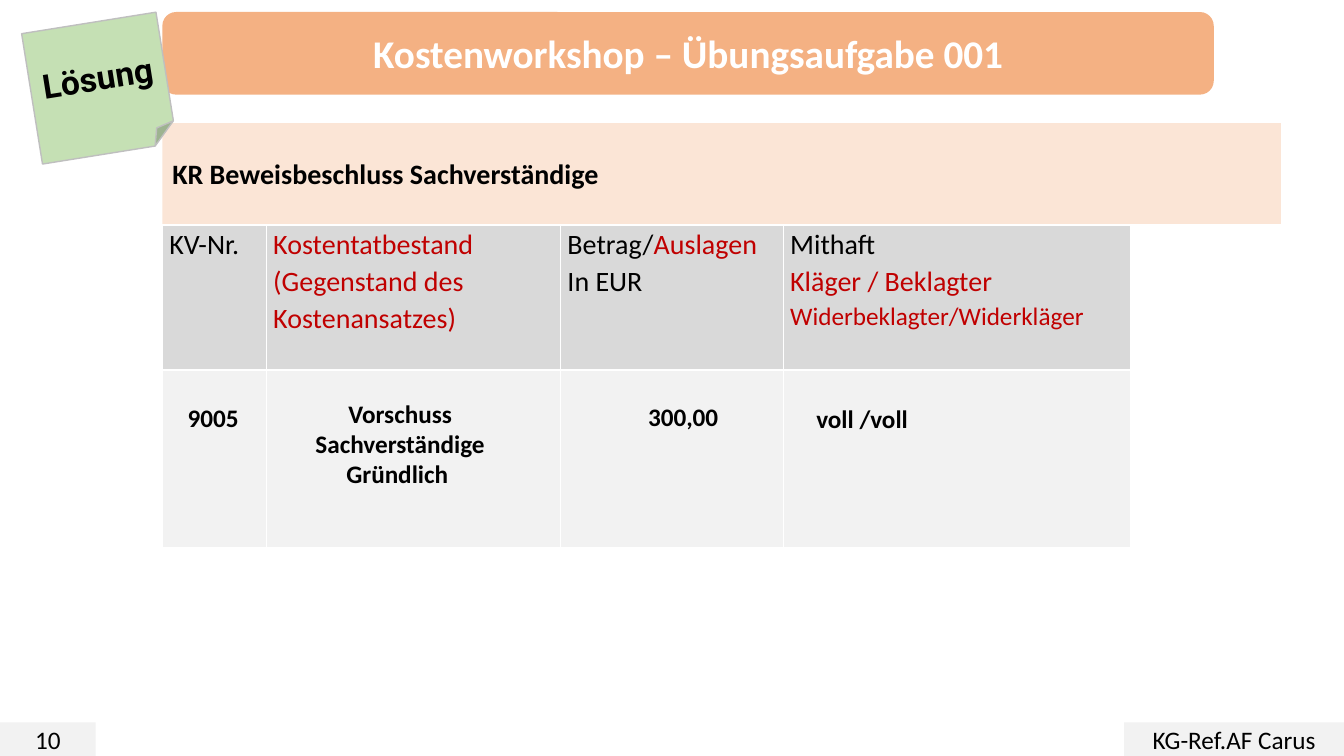
"""Builds the solution slide of cost workshop exercise 001."""
import pptx
import pptx.util
import pptx.dml.color
import pptx.enum.shapes
import pptx.enum.text
import lxml.etree

Pt = pptx.util.Pt
Shape = pptx.enum.shapes.MSO_SHAPE
Align = pptx.enum.text.PP_ALIGN
Anchor = pptx.enum.text.MSO_ANCHOR

THEME = {
    "font": "Calibri", "note_font": "Roboto",
    "black": "000000", "white": "FFFFFF", "red": "C00000",
    "title_fill": "F4B183", "subtitle_fill": "FBE5D6", "note_fill": "C5E0B4",
    "note_line": "BFBFBF", "header_fill": "D9D9D9", "pale": "F2F2F2",
    "title": 28, "note": 24, "large": 20, "body": 18,
}

HEADINGS = [
    [[("KV-Nr.", "black", "large")]],
    [[("Kostentatbestand", "red", "large")],
     [("(Gegenstand des Kostenansatzes)", "red", "large")]],
    [[("Betrag/", "black", "large"), ("Auslagen", "red", "large")],
     [("In EUR", "black", "large")]],
    [[("Mithaft", "black", "large")],
     [("Kläger / Beklagter", "red", "large")],
     [("Widerbeklagter/Widerkläger", "red", "body")]],
]
ENTRIES = [
    (["9005"], (120.2, 285.8, 64.1, 25.2), Align.CENTER, 1),
    (["Vorschuss Sachverständige", "Gründlich "],
     (197.3, 280.1, 177.1, 73.4), Align.CENTER, 1),
    (["300,00"], (455.8, 275.8, 72, 41.8), Align.LEFT, 1.07),
    (["voll /voll"], (576, 279.4, 175, 37.4), Align.LEFT, 1.07),
]
FOOTERS = [("10", 0, 68.4), ("KG-Ref.AF Carus", 803, 157)]

SLIDE_SIZE = (960, 540)
LEFT = 116
TABLE_TOP = 161.3
COLUMN_WIDTHS = (74.2, 210.2, 159.1, 248.4)
ROW_HEIGHTS = (103, 126.7)
CELL_INSET = 5
FOOTER_HEIGHT = 24


def rgb(name):
    """Return the theme colour of that name."""
    return pptx.dml.color.RGBColor.from_string(THEME[name])


def write(frame, paragraphs, font="font", bold=False, align=Align.LEFT, spacing=1):
    """Fill a text frame with paragraphs of (text, colour, size) runs."""
    frame.word_wrap = True
    for index, runs in enumerate(paragraphs):
        paragraph = frame.paragraphs[0] if index == 0 else frame.add_paragraph()
        paragraph.alignment = align
        paragraph.line_spacing = spacing
        for text, colour, size in runs:
            run = paragraph.add_run()
            run.text = text
            run.font.name = THEME[font]
            run.font.size = Pt(THEME[size])
            run.font.bold = bold
            run.font.color.rgb = rgb(colour)


def add_panel(slide, kind, box, fill, lines, colour="black", size="body", **text_format):
    """Add a filled shape with one paragraph per line."""
    panel = slide.shapes.add_shape(kind, *map(Pt, box))
    panel.shadow.inherit = False
    panel.fill.solid()
    panel.fill.fore_color.rgb = rgb(fill)
    panel.line.fill.background()
    panel.text_frame.vertical_anchor = Anchor.MIDDLE
    write(panel.text_frame, [[(line, colour, size)] for line in lines], **text_format)
    return panel


def style_cell(cell, fill):
    """Give a cell its borders, fill and margins."""
    properties = cell._tc.get_or_add_tcPr()
    namespace = "{http://schemas.openxmlformats.org/drawingml/2006/main}"
    for side in ("lnL", "lnR", "lnT", "lnB"):
        border = lxml.etree.SubElement(properties, namespace + side, w=str(Pt(1)))
        solid = lxml.etree.SubElement(border, namespace + "solidFill")
        lxml.etree.SubElement(solid, namespace + "srgbClr", val=THEME["white"])
    cell.fill.solid()
    cell.fill.fore_color.rgb = rgb(fill)
    cell.margin_left = cell.margin_right = Pt(CELL_INSET)
    cell.margin_top = cell.margin_bottom = 0


def add_cost_table(slide):
    """Add the cost table with its heading row."""
    table = slide.shapes.add_table(
        len(ROW_HEIGHTS), len(COLUMN_WIDTHS), Pt(LEFT), Pt(TABLE_TOP),
        Pt(sum(COLUMN_WIDTHS)), Pt(sum(ROW_HEIGHTS))).table
    for row, height in zip(table.rows, ROW_HEIGHTS):
        row.height = Pt(height)
    for index, (width, heading) in enumerate(zip(COLUMN_WIDTHS, HEADINGS)):
        table.columns[index].width = Pt(width)
        style_cell(table.cell(0, index), "header_fill")
        style_cell(table.cell(1, index), "pale")
        write(table.cell(0, index).text_frame, heading, spacing=1.07)


def main():
    """Assemble and save the slide."""
    deck = pptx.Presentation()
    deck.slide_width, deck.slide_height = map(Pt, SLIDE_SIZE)
    slide = deck.slides.add_slide(deck.slide_layouts[6])

    add_cost_table(slide)
    add_panel(slide, Shape.ROUNDED_RECTANGLE, (LEFT, 8.6, 751, 59), "title_fill",
              ["Kostenworkshop – Übungsaufgabe 001"], colour="white", size="title",
              bold=True, align=Align.CENTER)
    add_panel(slide, Shape.RECTANGLE, (LEFT, 88, 799, 72), "subtitle_fill",
              ["KR Beweisbeschluss Sachverständige"], size="large", bold=True)
    note = add_panel(slide, Shape.FOLDED_CORNER, (22.3, 15.8, 97.2, 94.3), "note_fill",
                     ["Lösung"], size="note", font="note_font", bold=True,
                     align=Align.CENTER)
    note.rotation = 350.9
    note.line.color.rgb = rgb("note_line")
    note.line.width = Pt(1)

    for label, left, width in FOOTERS:
        box = (left, SLIDE_SIZE[1] - FOOTER_HEIGHT, width, FOOTER_HEIGHT)
        add_panel(slide, Shape.RECTANGLE, box, "pale", [label], align=Align.CENTER)
    for lines, box, align, spacing in ENTRIES:
        add_panel(slide, Shape.RECTANGLE, box, "pale", lines, bold=True,
                  align=align, spacing=spacing)

    deck.save("out.pptx")


if __name__ == "__main__":
    main()
